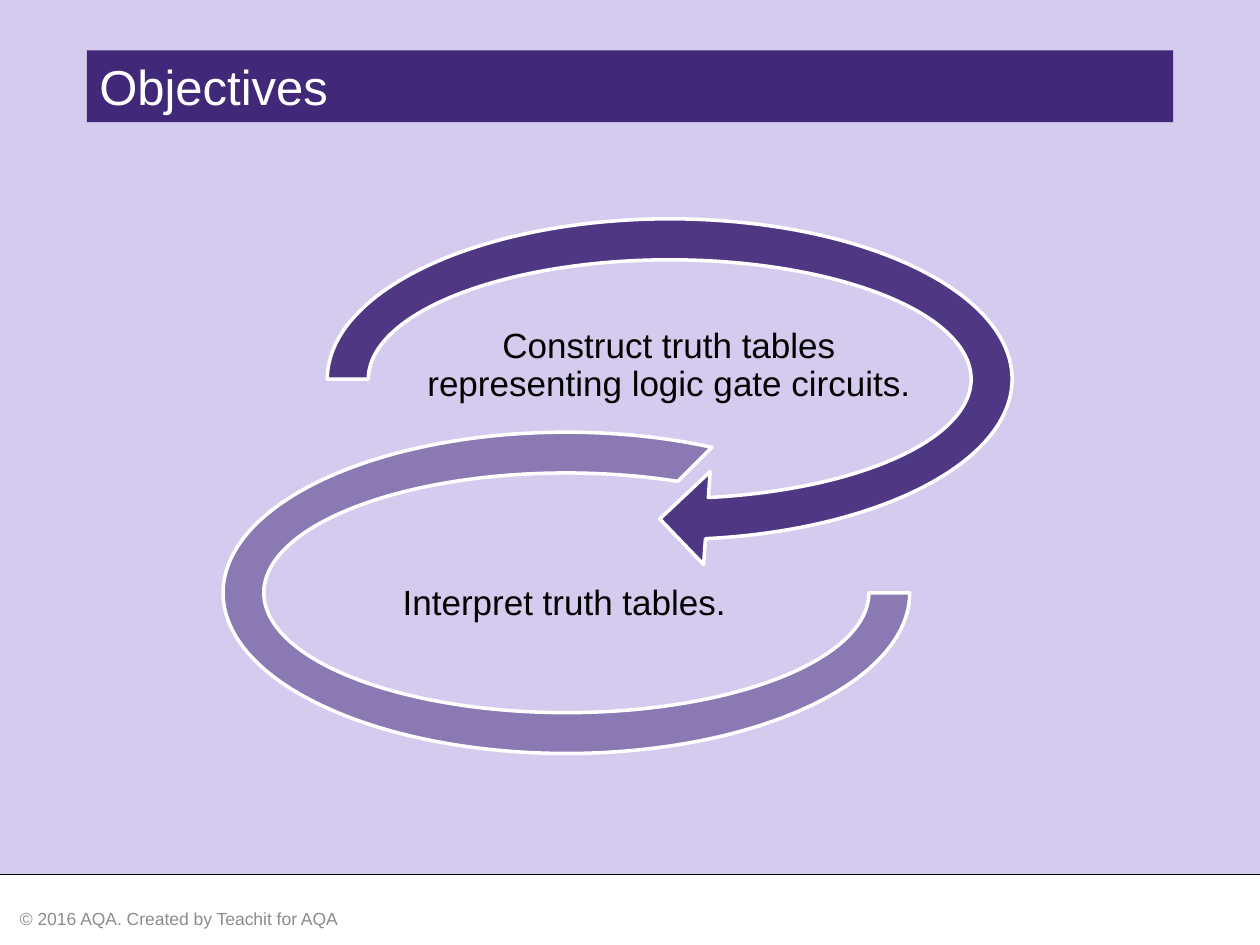
from dataclasses import dataclass

from lxml import etree
from pptx import Presentation
from pptx import util as u
from pptx.dml.color import RGBColor
from pptx.enum import shapes, text
from pptx.oxml import ns

FONT = "Arial"
PURPLE, LILAC, WHITE, BLACK, GREY = "412878", "D5CBEE", "FFFFFF", "000000", "8C8C8C"
WIDTH, HEIGHT, FOOTER_TOP = 720, 540, 499.68


@dataclass(frozen=True)
class Box:
    left: float
    top: float
    width: float
    height: float

    def lengths(self) -> list[u.Length]:
        return [u.Pt(value) for value in (self.left, self.top, self.width, self.height)]


@dataclass(frozen=True)
class Objective:
    wording: str
    label: Box
    preset: shapes.MSO_SHAPE
    loop: Box
    adjustments: tuple[float, ...]
    opacity: int  # per cent


OBJECTIVES = (
    Objective("Construct truth tables representing logic gate circuits.",
              Box(229.68, 179.28, 305.28, 59.76),
              shapes.MSO_SHAPE.CIRCULAR_ARROW, Box(172.08, 110.16, 421.2, 213.12),
              (0.11, 11.42, 45, 108, 0.125), 90),
    Objective("Interpret truth tables.",
              Box(169.92, 315.36, 305.28, 59.76),
              shapes.MSO_SHAPE.BLOCK_ARC, Box(127.44, 246.96, 392.4, 183.6),
              (0, 189, 0.127), 50),
)


def paint(color_format, color: str) -> None:
    color_format.rgb = RGBColor.from_string(color)


def add_filled(slide, preset: shapes.MSO_SHAPE, box: Box, color: str):
    shape = slide.shapes.add_shape(preset, *box.lengths())
    shape.shadow.inherit = False
    shape.fill.solid()
    paint(shape.fill.fore_color, color)
    shape.line.fill.background()
    return shape


def write(shape, wording: str, size: float, color: str, anchor=text.MSO_ANCHOR.MIDDLE):
    frame = shape.text_frame
    frame.word_wrap = True
    frame.vertical_anchor = anchor
    paragraph = frame.paragraphs[0]
    paragraph.alignment = text.PP_ALIGN.LEFT
    run = paragraph.add_run()
    run.text = wording
    run.font.name = FONT
    run.font.size = u.Pt(size)
    paint(run.font.color, color)
    return paragraph


def add_objective(slide, objective: Objective) -> None:
    # Translucent loop
    loop = add_filled(slide, objective.preset, objective.loop, PURPLE)
    for index, value in enumerate(objective.adjustments):
        loop.adjustments[index] = value
    color = loop.fill._xPr.find(ns.qn("a:solidFill"))[0]
    etree.SubElement(color, ns.qn("a:alpha"), val=str(objective.opacity * 1000))
    paint(loop.line.color, WHITE)
    loop.line.width = u.Pt(2)

    # Label inside the loop
    label = slide.shapes.add_textbox(*objective.label.lengths())
    paragraph = write(label, objective.wording, 20, BLACK)
    paragraph.alignment = text.PP_ALIGN.CENTER
    paragraph.line_spacing = 0.9
    for side in ("left", "top", "right", "bottom"):
        setattr(label.text_frame, f"margin_{side}", u.Pt(0.72))


def add_footer(slide) -> None:
    add_filled(slide, shapes.MSO_SHAPE.RECTANGLE,
               Box(0, FOOTER_TOP, WIDTH, HEIGHT - FOOTER_TOP), WHITE)
    rule = slide.shapes.add_connector(shapes.MSO_CONNECTOR.STRAIGHT, u.Pt(0), u.Pt(FOOTER_TOP),
                                      u.Pt(WIDTH), u.Pt(FOOTER_TOP))
    paint(rule.line.color, BLACK)
    rule.line.width = u.Pt(0.75)
    etree.SubElement(rule._element.spPr, ns.qn("a:effectLst"))
    credit = slide.shapes.add_textbox(*Box(4.32, 510.48, 288, 28.8).lengths())
    write(credit, "© 2016 AQA. Created by Teachit for AQA", 10, GREY)


def main() -> None:
    presentation = Presentation()
    presentation.slide_width, presentation.slide_height = u.Pt(WIDTH), u.Pt(HEIGHT)
    slide = presentation.slides.add_slide(presentation.slide_layouts[6])
    slide.background.fill.solid()
    paint(slide.background.fill.fore_color, LILAC)

    add_footer(slide)

    # Title bar
    title = add_filled(slide, shapes.MSO_SHAPE.RECTANGLE,
                       Box(49.68, 28.8, 620.64, 41.04), PURPLE)
    write(title, "Objectives", 28, WHITE, text.MSO_ANCHOR.TOP)

    for objective in OBJECTIVES:
        add_objective(slide, objective)

    presentation.save("out.pptx")


if __name__ == "__main__":
    main()
